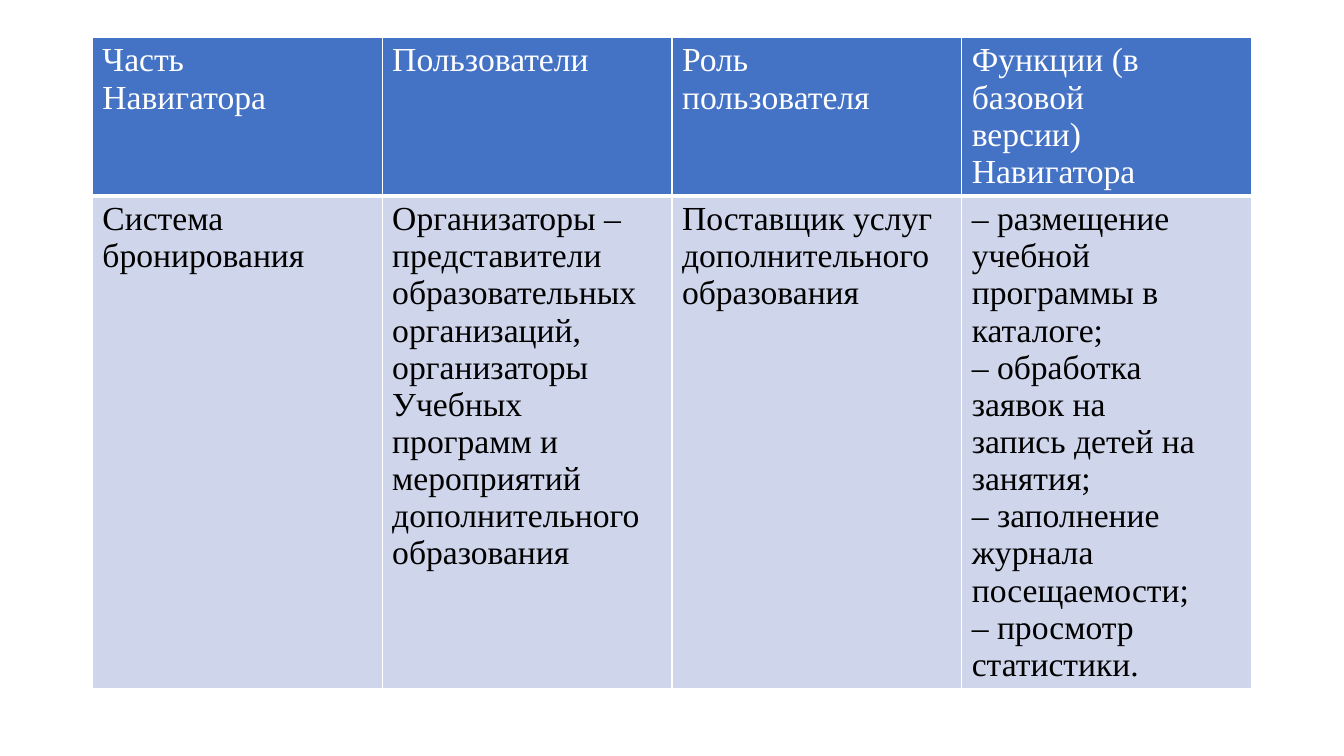
from dataclasses import dataclass

from lxml.etree import SubElement
from pptx import Presentation
from pptx.dml.color import RGBColor
from pptx.oxml.ns import qn
from pptx.table import _Cell
from pptx.util import Pt

COLUMN_WIDTH = 207
BORDER_COLOUR = "FFFFFF"


@dataclass
class TableRow:
    """A table row with its look; each text line is a paragraph."""
    height: float
    fill: str
    font_colour: str
    bottom_border: float
    texts: list[str]


ROWS = [
    TableRow(113, "4472C4", "FFFFFF", 3, [
        "Часть\nНавигатора",
        "Пользователи",
        "Роль\nпользователя",
        "Функции (в базовой\nверсии) Навигатора",
    ]),
    TableRow(351, "CFD5EA", "000000", 1, [
        "Система\nбронирования",
        "Организаторы –\nпредставители\nобразовательных\nорганизаций,\nорганизаторы\n"
        "Учебных программ и мероприятий\nдополнительного\nобразования",
        "Поставщик услуг\nдополнительного\nобразования",
        "– размещение учебной\nпрограммы в каталоге;\n– обработка заявок на\n"
        "запись детей на занятия;\n– заполнение журнала\nпосещаемости;\n"
        "– просмотр статистики.",
    ]),
]


def colour(value: str) -> RGBColor:
    """Turn a hex string into a colour."""
    return RGBColor.from_string(value)


def add_borders(cell: _Cell, widths: dict[str, float]) -> None:
    """Put solid borders ahead of the cell fill, in schema order."""
    properties = cell._tc.get_or_add_tcPr()
    for position, (side, width) in enumerate(widths.items()):
        line = SubElement(properties, qn(f"a:ln{side}"), w=str(Pt(width)))
        fill = SubElement(line, qn("a:solidFill"))
        SubElement(fill, qn("a:srgbClr"), val=BORDER_COLOUR)
        properties.insert(position, line)


def fill_cell(cell: _Cell, text: str, row: TableRow, top_border: float) -> None:
    """Write and format one cell."""
    cell.text_frame.text = text
    for para in cell.text_frame.paragraphs:
        for span in para.runs:
            span.font.name = "Times New Roman"
            span.font.size = Pt(24)
            span.font.bold = False
            span.font.color.rgb = colour(row.font_colour)
    cell.fill.solid()
    cell.fill.fore_color.rgb = colour(row.fill)
    add_borders(cell, {"L": 1, "R": 1, "T": top_border, "B": row.bottom_border})


def main() -> None:
    """Build the slide with the table of user roles."""
    deck = Presentation()
    deck.slide_width, deck.slide_height = Pt(960), Pt(540)
    page = deck.slides.add_slide(deck.slide_layouts[6])
    column_count = len(ROWS[0].texts)
    table = page.shapes.add_table(
        len(ROWS), column_count, Pt(66), Pt(26.4),
        Pt(COLUMN_WIDTH * column_count), Pt(sum(row.height for row in ROWS)),
    ).table
    for column in table.columns:
        column.width = Pt(COLUMN_WIDTH)
    top_border = 1
    for row_index, row in enumerate(ROWS):
        table.rows[row_index].height = Pt(row.height)
        for column_index, text in enumerate(row.texts):
            fill_cell(table.cell(row_index, column_index), text, row, top_border)
        top_border = row.bottom_border
    deck.save("out.pptx")


if __name__ == "__main__":
    main()
